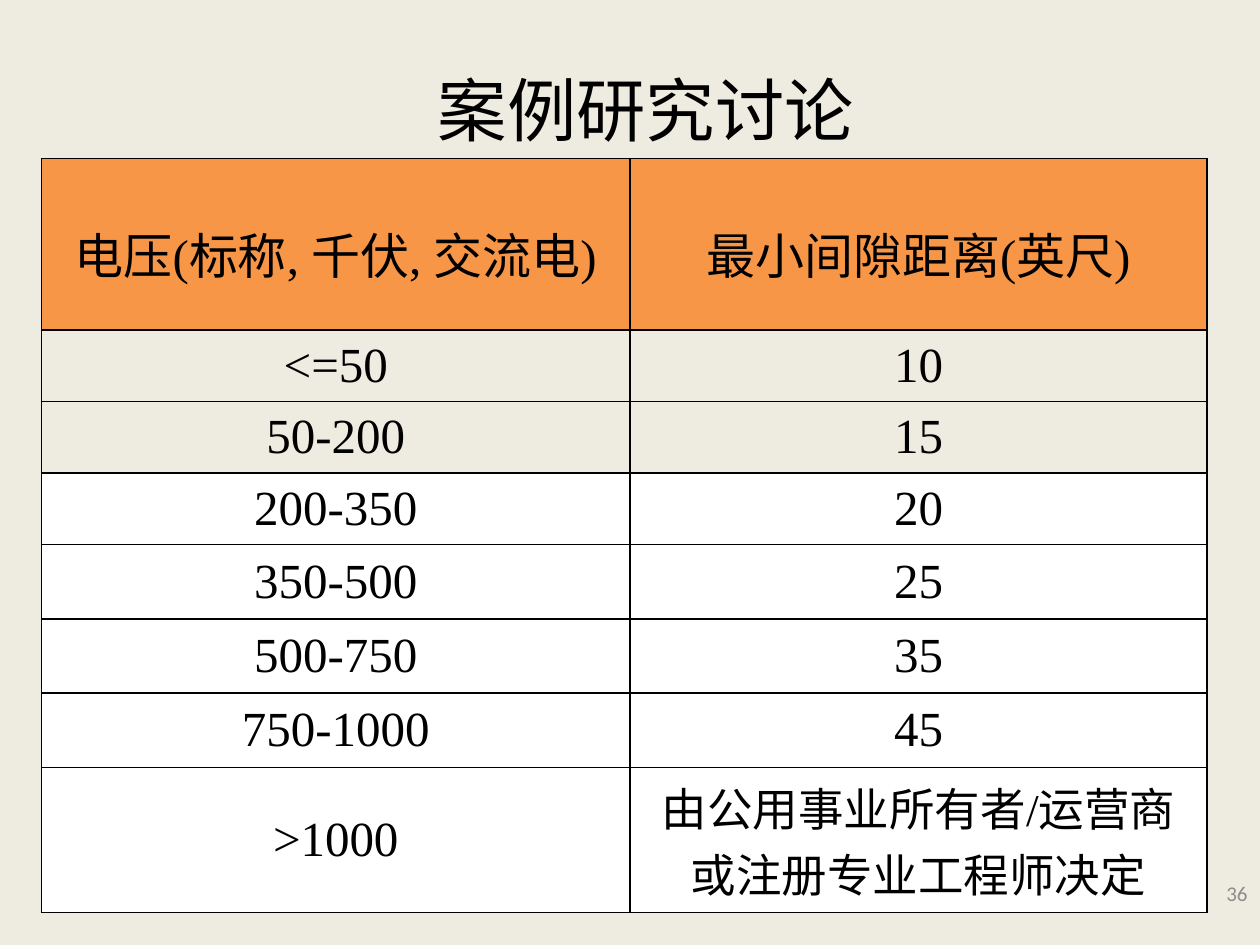
from lxml import etree
from pptx import Presentation
from pptx.dml.color import RGBColor
from pptx.enum.text import MSO_ANCHOR, PP_ALIGN
from pptx.oxml.ns import qn
from pptx.util import Inches, Pt

MIDDLE = MSO_ANCHOR.MIDDLE
CENTER, RIGHT = PP_ALIGN.CENTER, PP_ALIGN.RIGHT
TITLE_ONLY = 5

SERIF, SANS = "Times New Roman", "Calibri"
BACKGROUND, HEADER, WHITE = "EEECE1", "F79646", "FFFFFF"
BLACK, GREY = "000000", "8C8C8C"

CLEARANCES = [
    ("电压(标称, 千伏, 交流电)", "最小间隙距离(英尺)"),
    ("<=50", "10"),
    ("50-200", "15"),
    ("200-350", "20"),
    ("350-500", "25"),
    ("500-750", "35"),
    ("750-1000", "45"),
    (">1000", "由公用事业所有者/运营商或注册专业工程师决定"),
]
COLUMN_WIDTHS = [4.67, 4.58]
ROW_HEIGHTS = [1.36] + [0.53] * 3 + [0.59] * 3 + [1.15]
ROW_FILLS = [HEADER, None, None] + [WHITE] * 5


def rgb(value):
    return RGBColor.from_string(value)


def write(frame, text, size, font=SERIF, color=BLACK, align=CENTER):
    frame.text = text
    frame.word_wrap = True
    paragraph = frame.paragraphs[0]
    paragraph.alignment = align
    for run in paragraph.runs:
        run.font.size = Pt(size)
        run.font.name = font
        run.font.color.rgb = rgb(color)


def add_borders(cell):
    properties = cell._tc.get_or_add_tcPr()
    for position, side in enumerate(("lnL", "lnR", "lnT", "lnB")):
        line = etree.Element(qn(f"a:{side}"), w=str(Pt(1)))
        fill = etree.SubElement(line, qn("a:solidFill"))
        etree.SubElement(fill, qn("a:srgbClr"), val=BLACK)
        properties.insert(position, line)


def add_title(slide, box):
    title = slide.shapes.title
    title.left, title.top, title.width, title.height = map(Inches, box)
    frame = title.text_frame
    write(frame, "案例研究讨论", 39.6)
    frame.vertical_anchor = MIDDLE
    frame.margin_left = Inches(0.35)


def add_page_number(slide, box):
    frame = slide.shapes.add_textbox(*map(Inches, box)).text_frame
    write(frame, "36", 12, SANS, GREY, RIGHT)
    frame.vertical_anchor = MIDDLE


def add_clearance_table(slide, box):
    table = slide.shapes.add_table(
        len(CLEARANCES), len(COLUMN_WIDTHS), *map(Inches, box)).table
    table.horz_banding = False
    for column, width in zip(table.columns, COLUMN_WIDTHS):
        column.width = Inches(width)
    for row, height, fill, texts in zip(
            table.rows, ROW_HEIGHTS, ROW_FILLS, CLEARANCES):
        row.height = Inches(height)
        for cell, text in zip(row.cells, texts):
            write(cell.text_frame, text, 26 if len(text) > 20 else 28)
            cell.text_frame.paragraphs[0].runs[0].font.bold = False
            cell.vertical_anchor = MIDDLE
            cell.margin_top = Inches(0.19 if fill == HEADER else 0.05)
            if fill:
                cell.fill.solid()
                cell.fill.fore_color.rgb = rgb(fill)
            else:
                cell.fill.background()
            add_borders(cell)


def main():
    deck = Presentation()
    deck.slide_width, deck.slide_height = Inches(10), Inches(7.5)
    slide = deck.slides.add_slide(deck.slide_layouts[TITLE_ONLY])
    slide.background.fill.solid()
    slide.background.fill.fore_color.rgb = rgb(BACKGROUND)
    add_title(slide, (0.5, 0.55, 9, 0.62))
    add_page_number(slide, (7.75, 6.89, 2.25, 0.4))
    add_clearance_table(
        slide, (0.33, 1.26, sum(COLUMN_WIDTHS), sum(ROW_HEIGHTS)))
    deck.save("out.pptx")


if __name__ == "__main__":
    main()
